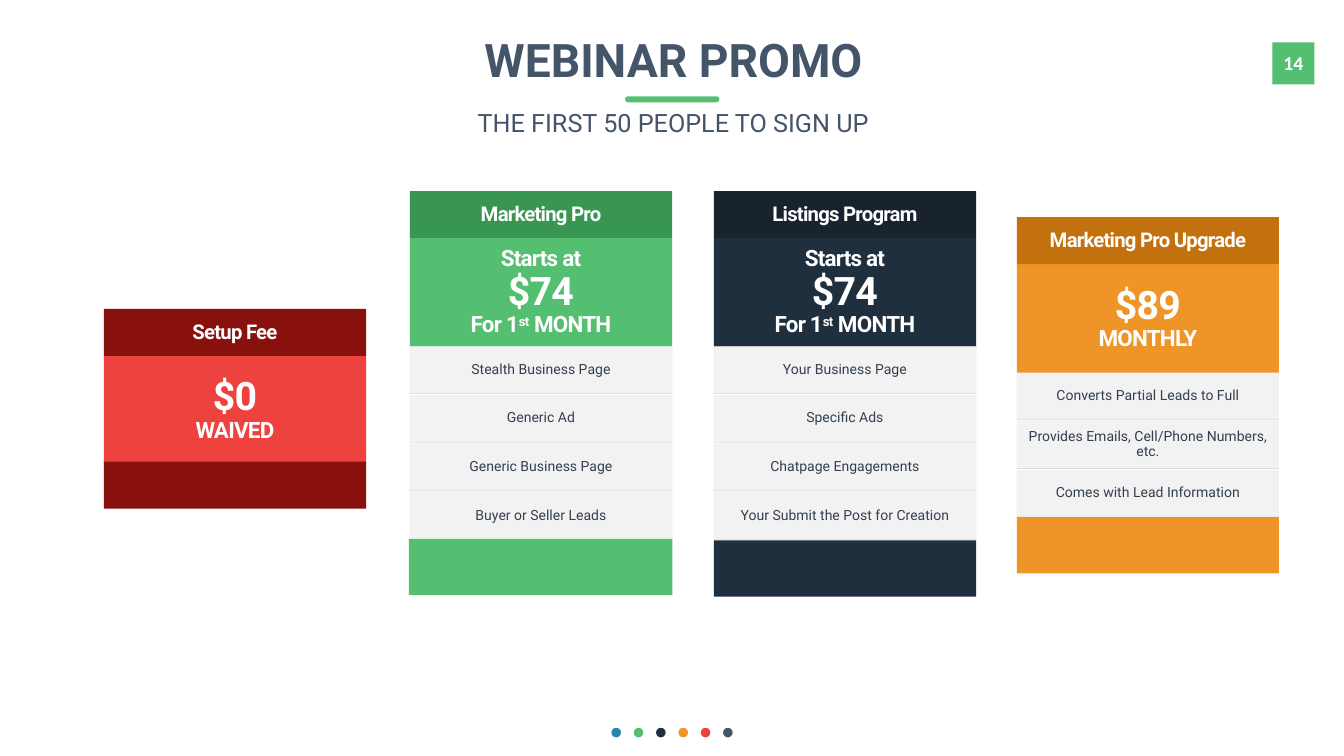
from dataclasses import dataclass

from lxml.etree import SubElement
from pptx import Presentation
from pptx.dml.color import RGBColor
from pptx.enum.shapes import MSO_SHAPE as Shape
from pptx.enum.text import MSO_ANCHOR as Anchor, MSO_AUTO_SIZE as AutoSize, PP_ALIGN as Align
from pptx.oxml.ns import qn
from pptx.util import Pt

WHITE = RGBColor(0xFF, 0xFF, 0xFF)
SLATE = RGBColor(0x44, 0x54, 0x69)
ROW_TEXT = RGBColor(0x33, 0x3F, 0x4F)
ROW_FILL = RGBColor(0xF2, 0xF2, 0xF2)
ROW_SHADOW = RGBColor(0xD9, 0xD9, 0xD9)
BLUE = RGBColor(0x26, 0x86, 0xA7)
GREEN = RGBColor(0x54, 0xBE, 0x71)
DARK_GREEN = RGBColor(0x39, 0x95, 0x52)
NAVY = RGBColor(0x20, 0x2F, 0x3E)
DARK_NAVY = RGBColor(0x18, 0x23, 0x2E)
ORANGE = RGBColor(0xEF, 0x95, 0x27)
DARK_ORANGE = RGBColor(0xC2, 0x71, 0x0E)
RED = RGBColor(0xED, 0x42, 0x3D)
DARK_RED = RGBColor(0x88, 0x10, 0x0D)

CARD_WIDTH = 374.5
HEADER_HEIGHT = 67
PRICE_HEIGHT = 155.5
ROW_HEIGHT = 67
ROW_PITCH = 69.4
ROWS_OFFSET = 222

# A price line is a size and its runs; a run is a text and whether it is raised.
FIRST_MONTH_PRICE = [
    (32, [("Starts at", False)]),
    (56, [("$74", False)]),
    (32, [("For 1", False), ("st", True), (" MONTH", False)]),
]


@dataclass
class Card:
    left: float
    top: float
    title: str
    price: list
    rows: list
    header_color: RGBColor
    price_color: RGBColor
    footer_color: RGBColor
    footer: tuple  # left, top, width, height


def simple_price(amount, note):
    return [(56, [(amount, False)]), (32, [(note, False)])]


def write_text(shape, lines, color=WHITE, bold=False, font="Roboto", tracking=None,
               anchor=Anchor.MIDDLE, margins=(0, 0), wrap=True, line_spacing=0.9):
    """Fill a shape with centred lines, each given as (size, [(text, raised), ...])."""
    frame = shape.text_frame
    frame.word_wrap = wrap
    frame.auto_size = AutoSize.NONE
    frame.vertical_anchor = anchor
    frame.margin_left = frame.margin_right = Pt(margins[0])
    frame.margin_top = frame.margin_bottom = Pt(margins[1])
    for index, (size, runs) in enumerate(lines):
        paragraph = frame.add_paragraph() if index else frame.paragraphs[0]
        paragraph.alignment = Align.CENTER
        paragraph.line_spacing = line_spacing
        paragraph.space_before = Pt(0)
        for text, raised in runs:
            run = paragraph.add_run()
            run.text = text
            run.font.size = Pt(size)
            run.font.name = font
            run.font.bold = bold
            run.font.color.rgb = color
            properties = run._r.get_or_add_rPr()
            if tracking is not None:
                properties.set("spc", str(round(tracking * 100)))
            if raised:
                properties.set("baseline", "30000")


def add_block(slide, left, top, width, height, fill, kind=Shape.RECTANGLE):
    shape = slide.shapes.add_shape(kind, Pt(left), Pt(top), Pt(width), Pt(height))
    shape.shadow.inherit = False
    shape.fill.solid()
    shape.fill.fore_color.rgb = fill
    shape.line.fill.background()
    return shape


def add_bottom_shadow(shape):
    """Draw a sharp one-point shadow below the shape."""
    effects = shape._element.spPr.find(qn("a:effectLst"))
    shadow = SubElement(effects, qn("a:outerShdw"), blurRad="0", dist=str(Pt(1)),
                        dir="5400000", algn="t", rotWithShape="0")
    SubElement(shadow, qn("a:srgbClr"), val=str(ROW_SHADOW))


def add_card(slide, card):
    price = add_block(slide, card.left, card.top + HEADER_HEIGHT, CARD_WIDTH,
                      PRICE_HEIGHT, card.price_color)
    write_text(price, card.price, bold=True, tracking=-1.1)
    for index, text in enumerate(card.rows):
        row_top = card.top + ROWS_OFFSET + index * ROW_PITCH
        row = add_block(slide, card.left, row_top, CARD_WIDTH, ROW_HEIGHT, ROW_FILL)
        add_bottom_shadow(row)
        write_text(row, [(20, [(text, False)])], color=ROW_TEXT)
    header = add_block(slide, card.left, card.top, CARD_WIDTH, HEADER_HEIGHT, card.header_color)
    write_text(header, [(29, [(card.title, False)])], bold=True, tracking=-1.1)
    add_block(slide, *card.footer, card.footer_color)


def fill_placeholder(placeholder, text, left, top, width, height, size, bold=False):
    placeholder.left, placeholder.top = Pt(left), Pt(top)
    placeholder.width, placeholder.height = Pt(width), Pt(height)
    write_text(placeholder, [(size, [(text, False)])], color=SLATE, bold=bold,
               anchor=Anchor.TOP, margins=(7.2, 3.6), wrap=False)


def add_page_number(slide, number):
    add_block(slide, 1817.3, 60.5, 60, 60, GREEN)
    box = slide.shapes.add_textbox(Pt(1816), Pt(64.8), Pt(62.6), Pt(48.5))
    write_text(box, [(28, [(number, False)])], bold=True, font="Calibri", anchor=Anchor.TOP,
               margins=(14.4, 7.2), wrap=False, line_spacing=1)


def add_dots(slide):
    for index, color in enumerate((BLUE, GREEN, NAVY, ORANGE, RED, SLATE)):
        add_block(slide, 873.2 + index * 31.9, 1039.7, 13.7, 13.7, color, Shape.OVAL)


def main():
    presentation = Presentation()
    presentation.slide_width, presentation.slide_height = Pt(1919.5), Pt(1080)
    slide = presentation.slides.add_slide(presentation.slide_layouts[0])

    add_page_number(slide, "14")
    add_dots(slide)
    fill_placeholder(slide.shapes.title, "WEBINAR PROMO", 660.2, 50.4, 603.4, 80.6, 66, bold=True)
    fill_placeholder(slide.placeholders[1], "THE FIRST 50 PEOPLE TO SIGN UP",
                     648.7, 154.1, 625.7, 47.5, 36)
    underline = add_block(slide, 892.8, 137.5, 134.6, 8.6, GREEN, Shape.ROUNDED_RECTANGLE)
    underline.adjustments[0] = 0.5

    cards = [
        Card(148.3, 441.4, "Setup Fee", simple_price("$0", "WAIVED"), [],
             DARK_RED, RED, DARK_RED, (148.3, 659.5, CARD_WIDTH, 67)),
        Card(585.4, 272.9, "Marketing Pro", FIRST_MONTH_PRICE,
             ["Stealth Business Page", "Generic Ad", "Generic Business Page",
              "Buyer or Seller Leads"],
             DARK_GREEN, GREEN, GREEN, (583.9, 769.7, 376.5, 80.6)),
        Card(1019.5, 272.9, "Listings Program", FIRST_MONTH_PRICE,
             ["Your Business Page", "Specific Ads", "Chatpage Engagements",
              "Your Submit the Post for Creation"],
             DARK_NAVY, NAVY, NAVY, (1019.5, 771.8, CARD_WIDTH, 80.6)),
        Card(1452.2, 310.3, "Marketing Pro Upgrade", simple_price("$89", "MONTHLY"),
             ["Converts Partial Leads to Full", "Provides Emails, Cell/Phone Numbers, etc.",
              "Comes with Lead Information"],
             DARK_ORANGE, ORANGE, ORANGE, (1452.2, 738.7, CARD_WIDTH, 80.6)),
    ]
    for card in cards:
        add_card(slide, card)

    presentation.save("out.pptx")


if __name__ == "__main__":
    main()
